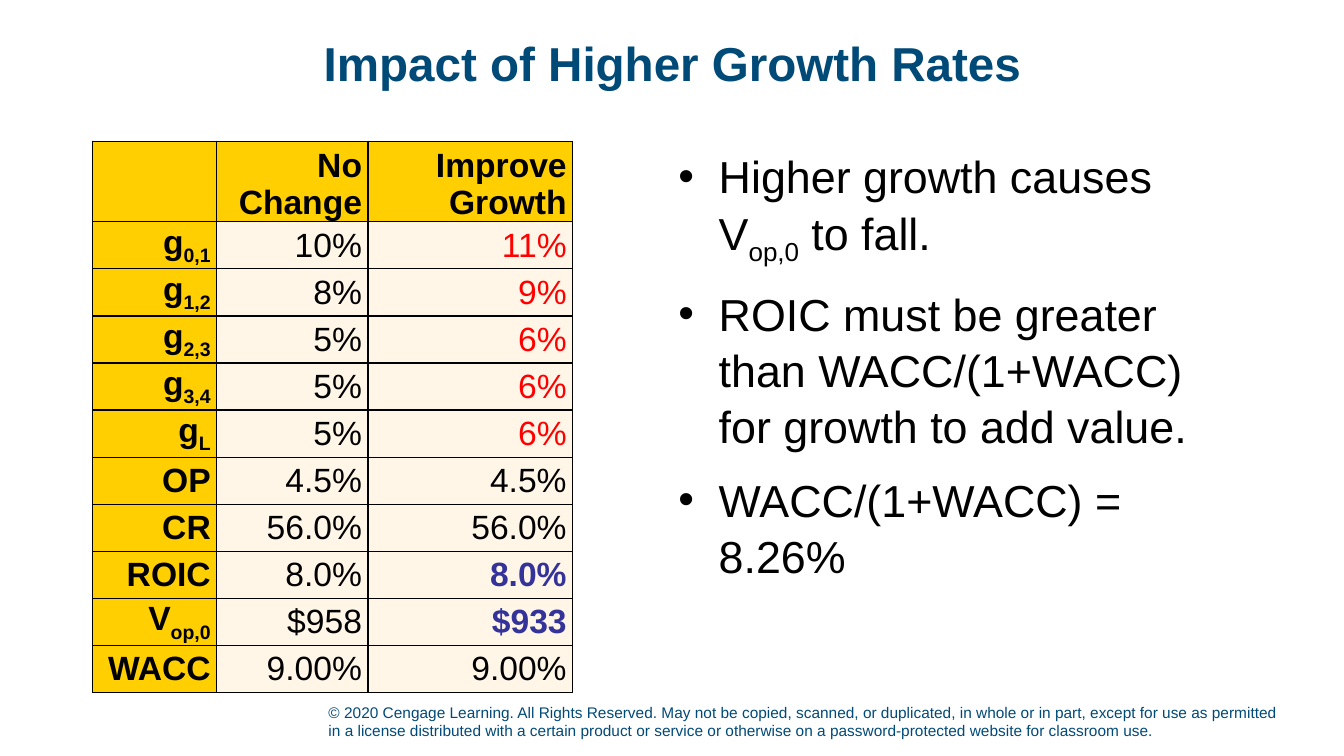
from dataclasses import dataclass

from lxml import etree
from pptx import Presentation
from pptx.dml.color import RGBColor
from pptx.enum.text import MSO_ANCHOR, PP_ALIGN
from pptx.oxml.ns import qn
from pptx.util import Inches, Pt

TOP, MIDDLE, BOTTOM = MSO_ANCHOR.TOP, MSO_ANCHOR.MIDDLE, MSO_ANCHOR.BOTTOM
LEFT, CENTER, RIGHT = PP_ALIGN.LEFT, PP_ALIGN.CENTER, PP_ALIGN.RIGHT


@dataclass(frozen=True)
class Theme:
    font: str = "Arial"
    title_size: int = 34
    body_size: int = 32
    table_size: int = 24
    footer_size: int = 11
    navy: str = "004A78"
    black: str = "000000"
    red: str = "FF0000"
    indigo: str = "333399"
    gold: str = "FFCF01"
    cream: str = "FFF6E7"


THEME = Theme()

# Plain text and subscripts alternate in each tuple
HEADERS = ("No Change", "Improve Growth")
ROWS = [
    (("g", "0,1"), "10%", "11%", THEME.red),
    (("g", "1,2"), "8%", "9%", THEME.red),
    (("g", "2,3"), "5%", "6%", THEME.red),
    (("g", "3,4"), "5%", "6%", THEME.red),
    (("g", "L"), "5%", "6%", THEME.red),
    (("OP",), "4.5%", "4.5%", THEME.black),
    (("CR",), "56.0%", "56.0%", THEME.black),
    (("ROIC",), "8.0%", "8.0%", THEME.indigo),
    (("V", "op,0"), "$958", "$933", THEME.indigo),
    (("WACC",), "9.00%", "9.00%", THEME.black),
]
BULLETS = [
    ("Higher growth causes V", "op,0", " to fall."),
    ("ROIC must be greater than WACC/(1+WACC) for growth to add value.",),
    ("WACC/(1+WACC) = 8.26%",),
]
COPYRIGHT = (
    "© 2020 Cengage Learning. All Rights Reserved. May not be copied, scanned, "
    "or duplicated, in whole or in part, except for use as permitted in a license "
    "distributed with a certain product or service or otherwise on a "
    "password-protected website for classroom use."
)


def apply_format(target, values):
    for name, value in values.items():
        setattr(target, name, value)


class SlideBuilder:
    def __init__(self, slide, theme):
        self.slide = slide
        self.theme = theme

    def add_text(self, paragraph, parts, size, color, bold=False, **layout):
        """Fill a paragraph, lowering every second part as a subscript."""
        apply_format(paragraph, layout)
        for index, part in enumerate(parts):
            run = paragraph.add_run()
            run.text = part
            apply_format(run.font, {"name": self.theme.font, "size": Pt(size), "bold": bold})
            run.font.color.rgb = RGBColor.from_string(color)
            if index % 2:
                run.font._element.set("baseline", "-25000")

    def text_box(self, left, top, width, height, anchor):
        box = self.slide.shapes.add_textbox(
            Inches(left), Inches(top), Inches(width), Inches(height))
        apply_format(box.text_frame, {"word_wrap": True, "vertical_anchor": anchor})
        return box.text_frame

    def label(self, place, text, size, color, anchor, **style):
        frame = self.text_box(*place, anchor)
        self.add_text(frame.paragraphs[0], (text,), size, color, **style)

    def bullet_list(self, place, items):
        frame = self.text_box(*place, TOP)
        for index, parts in enumerate(items):
            paragraph = frame.add_paragraph() if index else frame.paragraphs[0]
            properties = paragraph._p.get_or_add_pPr()
            properties.set("marL", str(Inches(0.4)))
            properties.set("indent", str(Inches(-0.4)))
            etree.SubElement(properties, qn("a:buFont"), typeface=self.theme.font)
            etree.SubElement(properties, qn("a:buChar"), char="•")
            self.add_text(paragraph, parts, self.theme.body_size, self.theme.black,
                          space_before=Pt(6 if index else 0), space_after=Pt(6),
                          line_spacing=1.05)

    def border_cell(self, cell):
        properties = cell._tc.get_or_add_tcPr()
        for position, side in enumerate(("lnL", "lnR", "lnT", "lnB")):
            line = etree.Element(qn(f"a:{side}"), w=str(Pt(1)))
            fill = etree.SubElement(line, qn("a:solidFill"))
            etree.SubElement(fill, qn("a:srgbClr"), val=self.theme.black)
            properties.insert(position, line)

    def table_cell(self, cell, parts, fill, color, bold, anchor):
        apply_format(cell, {
            "margin_left": Inches(0.06), "margin_right": Inches(0.06),
            "margin_top": 0, "margin_bottom": 0, "vertical_anchor": anchor})
        cell.fill.solid()
        cell.fill.fore_color.rgb = RGBColor.from_string(fill)
        self.border_cell(cell)
        self.add_text(cell.text_frame.paragraphs[0], parts, self.theme.table_size,
                      color, bold, alignment=RIGHT)

    def growth_table(self, place, widths, header_height):
        left, top, width, height = place
        theme = self.theme
        table = self.slide.shapes.add_table(
            len(ROWS) + 1, len(widths),
            Inches(left), Inches(top), Inches(width), Inches(height)).table
        for column, column_width in zip(table.columns, widths):
            column.width = Inches(column_width)
        row_height = (height - header_height) / len(ROWS)
        for index, row in enumerate(table.rows):
            row.height = Inches(row_height if index else header_height)

        # Header row
        for column, header in enumerate(((), *((text,) for text in HEADERS))):
            self.table_cell(table.cell(0, column), header, theme.gold,
                            theme.black, True, BOTTOM)
        # Label, base value and changed value in each row
        for index, (name, base, changed, color) in enumerate(ROWS, start=1):
            cells = (
                (name, theme.gold, theme.black, True),
                ((base,), theme.cream, theme.black, False),
                ((changed,), theme.cream, color, color == theme.indigo),
            )
            for column, cell_style in enumerate(cells):
                self.table_cell(table.cell(index, column), *cell_style, MIDDLE)


def main():
    presentation = Presentation()
    apply_format(presentation, {"slide_width": Inches(13.33), "slide_height": Inches(7.5)})
    slide = presentation.slides.add_slide(presentation.slide_layouts[6])
    builder = SlideBuilder(slide, THEME)

    # Copyright line
    builder.label((3.16, 6.89, 9.63, 0.5), COPYRIGHT, THEME.footer_size,
                  THEME.navy, BOTTOM, alignment=LEFT)
    # Title
    builder.label((0.92, 0.15, 11.5, 1), "Impact of Higher Growth Rates",
                  THEME.title_size, THEME.navy, MIDDLE,
                  bold=True, alignment=CENTER, line_spacing=0.95)
    # Comparison table and conclusions
    builder.growth_table((0.92, 1.4, 4.76, 5.43), (1.23, 1.5, 2.03), 0.76)
    builder.bullet_list((6.63, 1.4, 5.78, 5.36), BULLETS)

    presentation.save("out.pptx")


if __name__ == "__main__":
    main()
